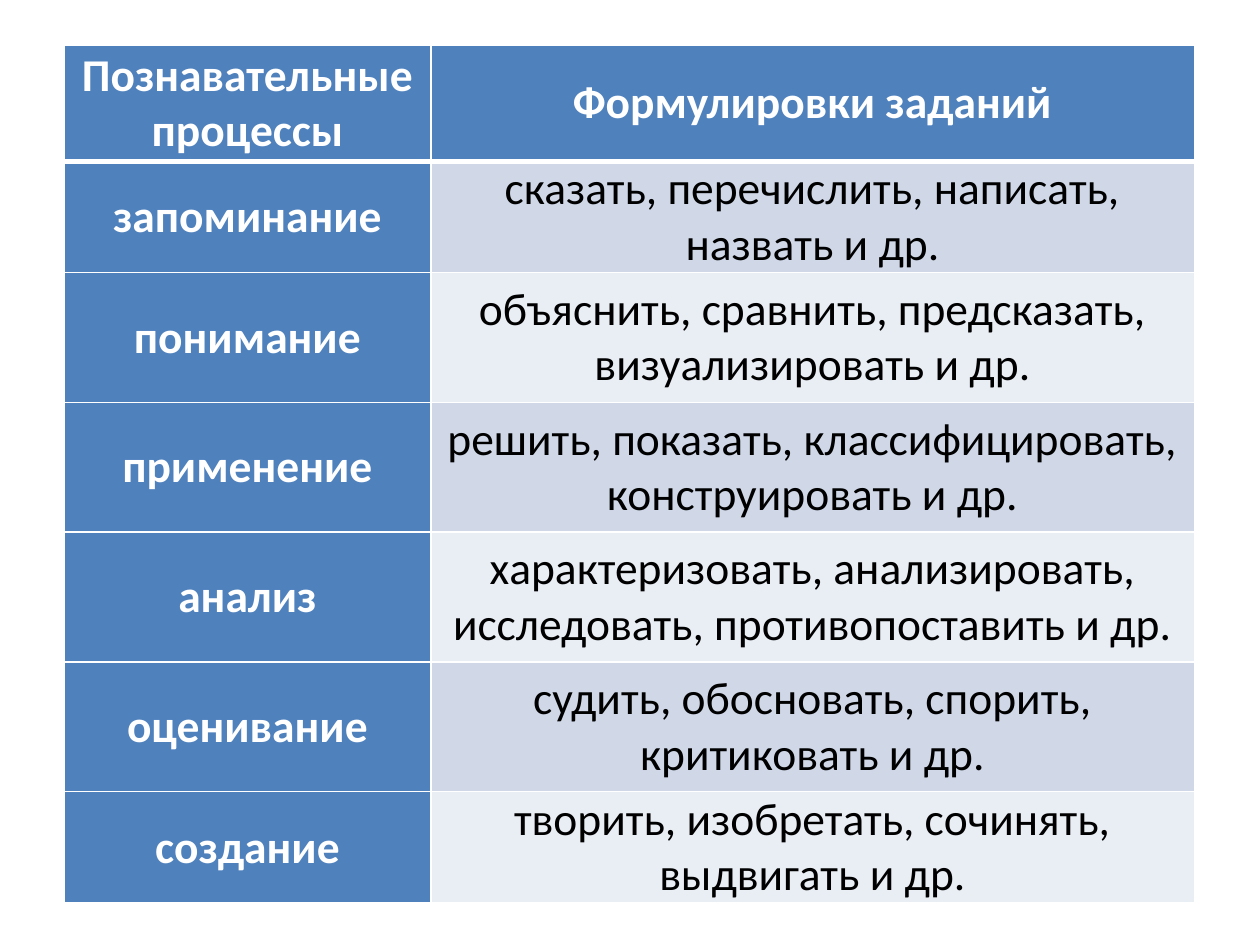
from dataclasses import dataclass

from lxml.etree import SubElement
from pptx import Presentation
from pptx.dml.color import RGBColor
from pptx.enum.text import MSO_ANCHOR, PP_ALIGN
from pptx.oxml.ns import qn
from pptx.table import _Cell
from pptx.util import Inches, Pt

BLUE, WHITE, BLACK = "4F81BD", "FFFFFF", "000000"
BANDS = ("D0D8E8", "E9EDF4")
COLUMN_WIDTHS = (2.91, 6.06)
HEADER_HEIGHT, COMPACT_HEIGHT, ROW_HEIGHT = 0.92, 0.88, 1.03


@dataclass(frozen=True)
class TaskRow:
    """A cognitive process and the wording of its tasks."""
    process: str
    tasks: str
    height: float = ROW_HEIGHT


HEADER = TaskRow("Познавательные\nпроцессы", "Формулировки заданий", HEADER_HEIGHT)
TASK_ROWS = (
    TaskRow("запоминание", "сказать, перечислить, написать, назвать и др.", COMPACT_HEIGHT),
    TaskRow("понимание", "объяснить, сравнить, предсказать, визуализировать и др."),
    TaskRow("применение", "решить, показать, классифицировать, конструировать и др."),
    TaskRow("анализ", "характеризовать, анализировать, исследовать, противопоставить и др."),
    TaskRow("оценивание", "судить, обосновать, спорить, критиковать и др."),
    TaskRow("создание", "творить, изобретать, сочинять, выдвигать и др.", COMPACT_HEIGHT),
)


def color(value: str) -> RGBColor:
    """Turn a hex string into a colour."""
    return RGBColor.from_string(value)


def write_text(cell: _Cell, text: str, *, ink: str = WHITE, bold: bool = True,
               size: float = 26, font: str = "Calibri") -> None:
    """Write centred text into a cell, one paragraph per line."""
    cell.text_frame.text = text
    for paragraph in cell.text_frame.paragraphs:
        paragraph.alignment = PP_ALIGN.CENTER
        for run in paragraph.runs:
            run.font.name, run.font.size, run.font.bold = font, Pt(size), bold
            run.font.color.rgb = color(ink)


def style_cell(cell: _Cell, fill: str, top: float = 1, bottom: float = 1) -> None:
    """Set the margins, white borders and fill of a cell."""
    cell.vertical_anchor = MSO_ANCHOR.MIDDLE
    cell.margin_left = cell.margin_right = Inches(0.07)
    cell.margin_top = cell.margin_bottom = Inches(0)
    properties = cell._tc.get_or_add_tcPr()
    for side, width in (("L", 1), ("R", 1), ("T", top), ("B", bottom)):
        line = SubElement(properties, qn(f"a:ln{side}"), w=str(Pt(width)))
        solid = SubElement(line, qn("a:solidFill"))
        SubElement(solid, qn("a:srgbClr"), val=WHITE)
    cell.fill.solid()
    cell.fill.fore_color.rgb = color(fill)


def main() -> None:
    """Build the slide with the table of cognitive processes."""
    presentation = Presentation()
    presentation.slide_width, presentation.slide_height = Inches(10), Inches(7.5)
    slide = presentation.slides.add_slide(presentation.slide_layouts[6])
    rows = (HEADER, *TASK_ROWS)
    table = slide.shapes.add_table(
        len(rows), len(COLUMN_WIDTHS), Inches(0.51), Inches(0.36),
        Inches(sum(COLUMN_WIDTHS)), Inches(sum(row.height for row in rows))).table
    table.first_col = True
    for column, width in zip(table.columns, COLUMN_WIDTHS):
        column.width = Inches(width)
    for index, row in enumerate(rows):
        table.rows[index].height = Inches(row.height)
        is_header = index == 0
        process_cell, tasks_cell = table.rows[index].cells
        write_text(process_cell, row.process)
        write_text(tasks_cell, row.tasks, ink=WHITE if is_header else BLACK, bold=is_header)
        top, bottom = 3 if index == 1 else 1, 3 if is_header else 1
        style_cell(process_cell, BLUE, top, bottom)
        style_cell(tasks_cell, BLUE if is_header else BANDS[(index - 1) % 2], top, bottom)
    presentation.save("out.pptx")


if __name__ == "__main__":
    main()
